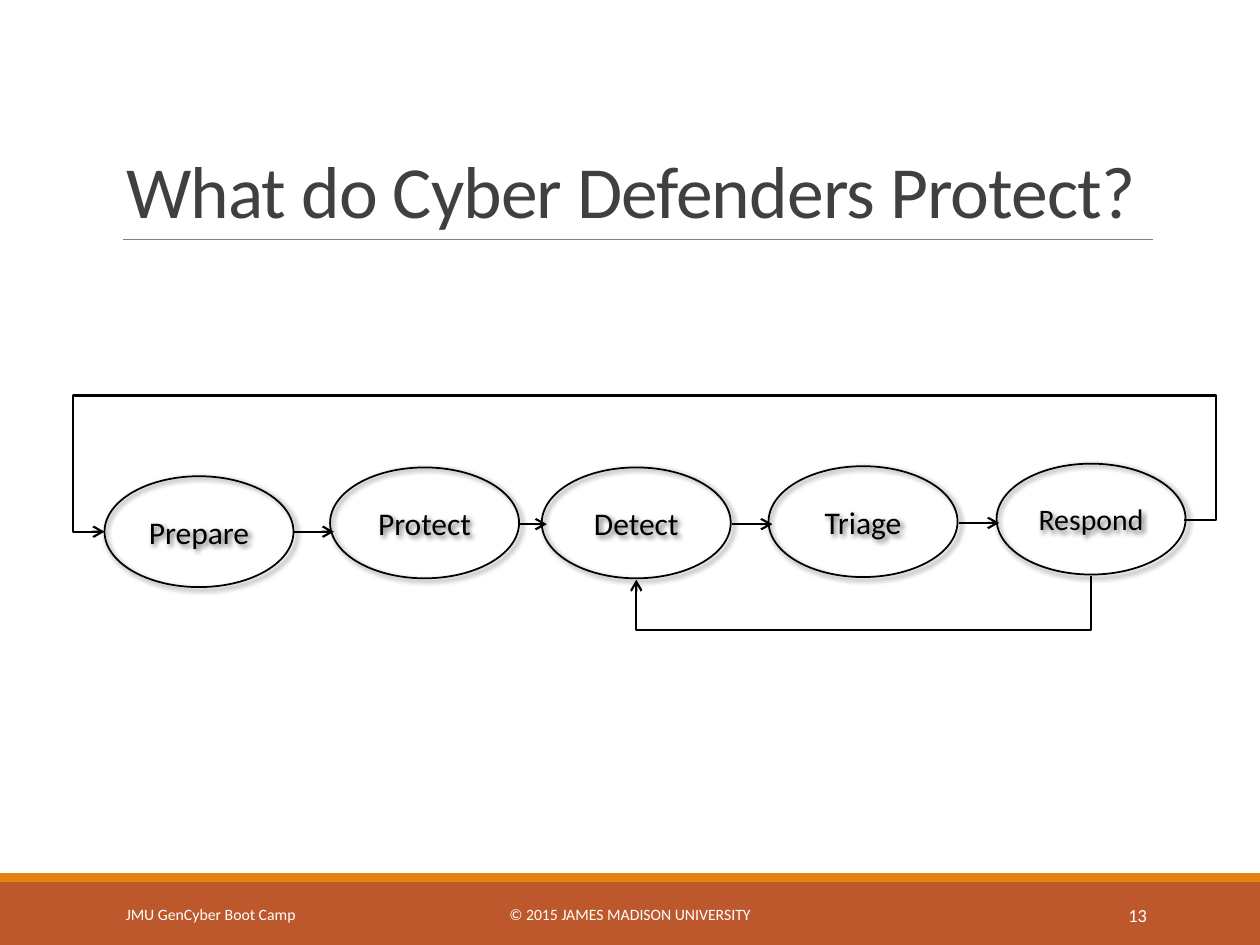
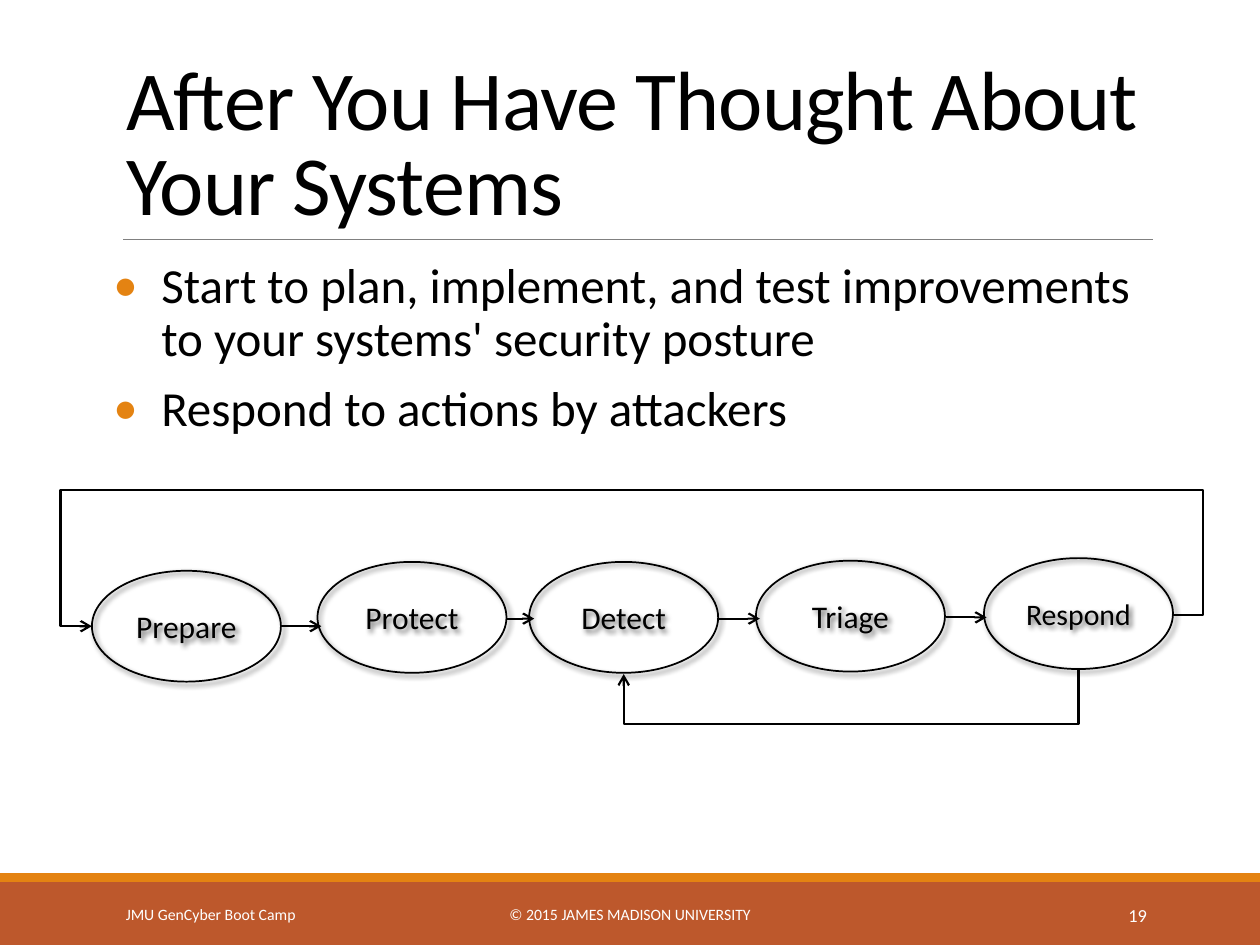
from dataclasses import dataclass

from lxml import etree
from pptx import Presentation
from pptx.dml.color import RGBColor
from pptx.enum.shapes import MSO_CONNECTOR, MSO_SHAPE
from pptx.enum.text import MSO_ANCHOR, MSO_AUTO_SIZE, PP_ALIGN
from pptx.oxml.ns import qn
from pptx.util import Inches, Pt

LINE, ELBOW = MSO_CONNECTOR.STRAIGHT, MSO_CONNECTOR.ELBOW
RECT, OVAL = MSO_SHAPE.RECTANGLE, MSO_SHAPE.OVAL
LEFT, CENTER, RIGHT = PP_ALIGN.LEFT, PP_ALIGN.CENTER, PP_ALIGN.RIGHT
TOP, MIDDLE, BOTTOM = MSO_ANCHOR.TOP, MSO_ANCHOR.MIDDLE, MSO_ANCHOR.BOTTOM
TITLE_ONLY, TITLE_BODY = 5, 1
# Connection sites of an ellipse
WEST, SOUTH, EAST = 2, 4, 6


@dataclass(frozen=True)
class Theme:
    font: str = "Calibri"
    ink: str = "000000"
    soft: str = "404040"
    rule: str = "808080"
    white: str = "FFFFFF"
    band: str = "BD582C"
    accent: str = "E48312"
    body: float = 28
    step: float = 18
    foot: float = 9
    number: float = 10.5


THEME = Theme()
WIDE, HIGH = 1.5, 0.88
# Name, left, top and type size of each step
STEPS = [
    ("Prepare", 0.83, 3.78, THEME.step),
    ("Protect", 2.62, 3.71, THEME.step),
    ("Detect", 4.3, 3.71, THEME.step),
    ("Triage", 6.1, 3.7, THEME.step),
    ("Respond", 7.91, 3.68, 17),
]
# Start, end and height of the arrows between neighbours
ARROWS = [(2.33, 2.65, 4.22), (4.12, 4.34, 4.16),
          (5.81, 6.13, 4.16), (7.61, 7.93, 4.15)]


def color(code):
    return RGBColor.from_string(code)


def node(parent, tag, **attrs):
    item = etree.SubElement(parent, qn(tag))
    for key, value in attrs.items():
        item.set(key, str(value))
    return item


def place(shape, left, top, width, height):
    shape.left, shape.top = Inches(left), Inches(top)
    shape.width, shape.height = Inches(width), Inches(height)


def put(shape, *lines, size, ink=THEME.ink, align=LEFT, anchor=MIDDLE,
        leading=None, before=0, after=0, track=None, bullet=None):
    """Fill a shape with one paragraph per line."""
    frame = shape.text_frame
    frame.word_wrap = True
    frame.auto_size = MSO_AUTO_SIZE.NONE
    frame.vertical_anchor = anchor
    for i, line in enumerate(lines):
        para = frame.add_paragraph() if i else frame.paragraphs[0]
        para.alignment = align
        para.line_spacing = leading
        para.space_before = Pt(before if i else 0)
        para.space_after = Pt(after)
        if bullet:
            dot(para, bullet)
        run = para.add_run()
        run.text = line
        run.font.name, run.font.size = THEME.font, Pt(size)
        run.font.color.rgb = color(ink)
        if track:
            run.font._element.set("spc", str(round(track * 100)))


def dot(para, mark, indent=0.38):
    props = para._p.get_or_add_pPr()
    props.set("marL", str(Inches(indent)))
    props.set("indent", str(-Inches(indent)))
    node(node(props, "a:buClr"), "a:srgbClr", val=THEME.accent)
    node(props, "a:buFont", typeface=THEME.font)
    node(props, "a:buChar", char=mark)


def band(slide, top, height, fill):
    bar = slide.shapes.add_shape(RECT, 0, 0, 0, 0)
    place(bar, 0, top, 10, height)
    bar.shadow.inherit = False
    bar.fill.solid()
    bar.fill.fore_color.rgb = color(fill)
    bar.line.fill.background()


def link(slide, start, end, kind=LINE, ink=THEME.ink, weight=1.25, arrow=True):
    wire = slide.shapes.add_connector(
        kind, *(Inches(v) for v in (*start, *end)))
    wire.line.color.rgb = color(ink)
    wire.line.width = Pt(weight)
    if arrow:
        node(wire.line._get_or_add_ln(), "a:tailEnd", type="arrow")
    node(wire._element.spPr, "a:effectLst")
    return wire


def glue(wire, tail, head):
    """Tie a connector to (shape, site) pairs without moving it."""
    props = wire._element.find(qn("p:nvCxnSpPr")).find(qn("p:cNvCxnSpPr"))
    for tag, (shape, site) in (("a:stCxn", tail), ("a:endCxn", head)):
        node(props, tag, id=shape.shape_id, idx=site)


def bend(wire, preset, *ratios):
    """Set the elbow preset and its turns, as fractions of the span."""
    geom = wire._element.spPr.find(qn("a:prstGeom"))
    geom.set("prst", preset)
    guides = geom.find(qn("a:avLst"))
    for i, ratio in enumerate(ratios, 1):
        node(guides, "a:gd", name=f"adj{i}", fmla=f"val {round(ratio * 100000)}")


def step(slide, name, left, top, size):
    oval = slide.shapes.add_shape(OVAL, 0, 0, 0, 0)
    place(oval, left, top, WIDE, HIGH)
    oval.fill.background()
    oval.line.color.rgb = color(THEME.ink)
    oval.line.width = Pt(1)
    oval.shadow.inherit = False
    effects = oval._element.spPr.find(qn("a:effectLst"))
    shade = node(effects, "a:outerShdw", blurRad=Pt(3), dist=Pt(2),
                 dir=45 * 60000, algn="tl", rotWithShape=0)
    node(node(shade, "a:srgbClr", val=THEME.ink), "a:alpha", val=60000)
    put(oval, name, size=size, align=CENTER)
    return oval


def cycle(slide, dx=0, dy=0):
    """Draw the five steps, their arrows and the two return loops."""
    ovals = {name: step(slide, name, x + dx, y + dy, size)
             for name, x, y, size in STEPS}
    for start, end, y in ARROWS:
        link(slide, (start + dx, y + dy), (end + dx, y + dy))

    # The lower loop is stored unturned, then rotated a quarter
    drop, span = 0.03, 3.61
    x, y = 6.84 + dx, 2.78 + dy
    lower = link(slide, (x, y), (x + drop, y + span), ELBOW)
    lower._element.spPr.find(qn("a:xfrm")).set("rot", str(90 * 60000))
    bend(lower, "bentConnector3", 0.43 / drop)
    glue(lower, (ovals["Respond"], SOUTH), (ovals["Detect"], SOUTH))

    span, drop, side, rise = 8.57, 0.09, 0.25, 0.99
    x, y = 9.4 + dx, 4.13 + dy
    upper = link(slide, (x, y), (x - span, y + drop), ELBOW)
    bend(upper, "bentConnector5", -side / span, -rise / drop, 1 + side / span)
    glue(upper, (ovals["Respond"], EAST), (ovals["Prepare"], WEST))


def label(slide, text, left, width, size, align):
    box = slide.shapes.add_textbox(0, 0, 0, 0)
    place(box, left, 7.06, width, 0.4)
    put(box, text, size=size, ink=THEME.white, align=align)


def page(deck, layout, title, number, size, ink):
    """Add a slide with the shared bands, rule, title and footer."""
    slide = deck.slides.add_slide(deck.slide_layouts[layout])
    band(slide, 7, 0.5, THEME.band)
    band(slide, 6.93, 0.07, THEME.accent)
    link(slide, (0.98, 1.9), (9.15, 1.9), ink=THEME.rule, weight=0.5,
         arrow=False)
    head = slide.shapes.title
    place(head, 0.9, 0.31, 8.25, 1.59)
    put(head, title, size=size, ink=ink, anchor=BOTTOM, leading=0.85,
        track=-0.5)
    label(slide, "JMU GenCyber Boot Camp", 0.9, 2.03, THEME.foot, LEFT)
    label(slide, "© 2015 JAMES MADISON UNIVERSITY", 3.02, 3.96, THEME.foot,
          CENTER)
    label(slide, str(number), 8.12, 1.08, THEME.number, RIGHT)
    return slide


def points(slide, *lines):
    body = slide.placeholders[1]
    place(body, 0.9, 2.02, 8.25, 4.4)
    body.text_frame.margin_left = body.text_frame.margin_right = 0
    put(body, *lines, size=THEME.body, anchor=TOP, leading=0.9, before=8,
        after=2, bullet="•")


def main():
    deck = Presentation()
    deck.slide_width, deck.slide_height = Inches(10), Inches(7.5)

    slide = page(deck, TITLE_ONLY, "What do Cyber Defenders Protect?", 13,
                 42, THEME.soft)
    cycle(slide)

    slide = page(deck, TITLE_BODY, "After You Have Thought About Your Systems",
                 19, 48, THEME.ink)
    points(slide,
           "Start to plan, implement, and test improvements to your systems' "
           "security posture",
           "Respond to actions by attackers")
    cycle(slide, dx=-0.1, dy=0.75)

    deck.save("out.pptx")


if __name__ == "__main__":
    main()
